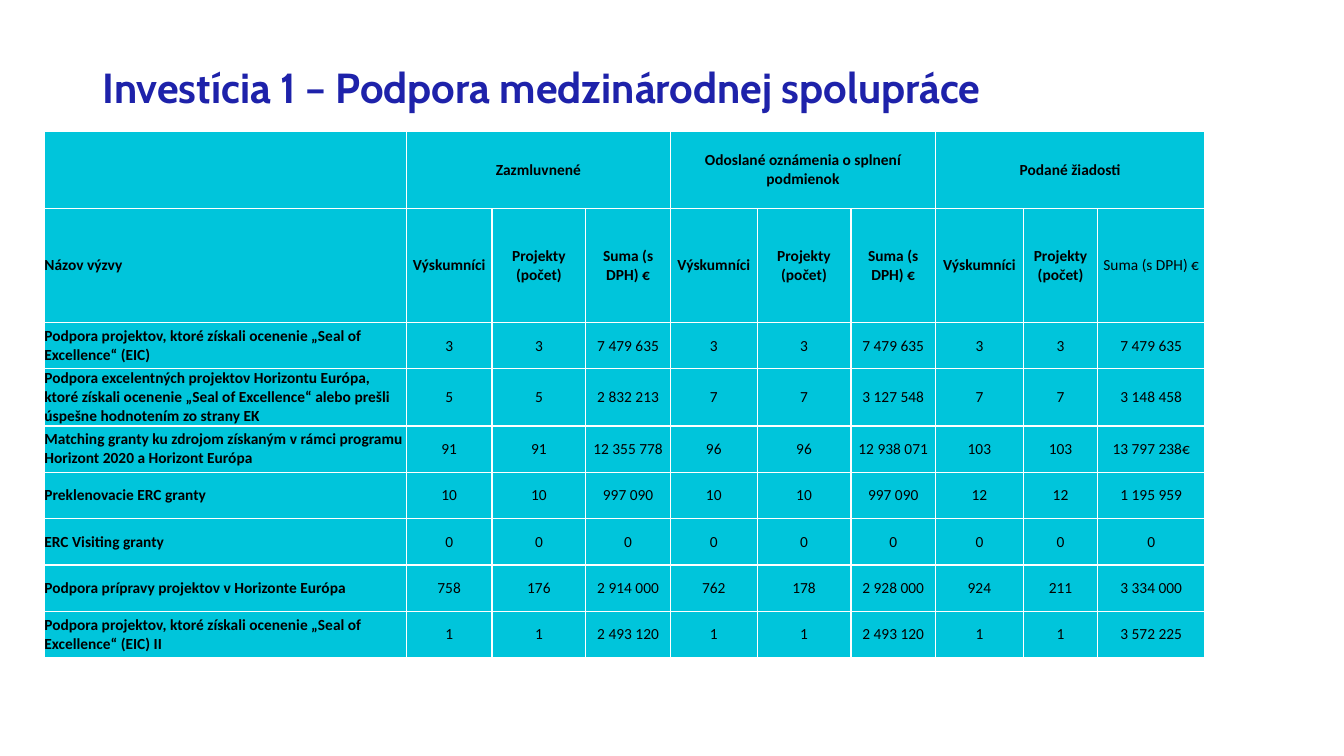
from dataclasses import dataclass

from lxml.etree import SubElement
from pptx import Presentation
from pptx.dml.color import RGBColor
from pptx.enum.text import MSO_ANCHOR, PP_ALIGN
from pptx.oxml.ns import qn
from pptx.util import Pt

PX = 9144  # EMU, 100 px to the inch


@dataclass(frozen=True)
class Theme:
    title_color: RGBColor = RGBColor(0x1E, 0x22, 0xAA)
    text_color: RGBColor = RGBColor(0, 0, 0)
    cell_fill: RGBColor = RGBColor(0x00, 0xC5, 0xDB)
    border: str = "FFFFFF"
    title_font: str = "Cabin"
    table_font: str = "Calibri"
    title_size: int = 30
    table_size: int = 11
    border_width: int = 1


THEME = Theme()
TITLE = "Investícia 1 – Podpora medzinárodnej spolupráce"
GROUPS = ["Zazmluvnené", "Odoslané oznámenia o splnení podmienok", "Podané žiadosti"]
MEASURES = ["Výskumníci", "Projekty (počet)", "Suma (s DPH) €"]
CALLS = [
    ["Podpora projektov, ktoré získali ocenenie „Seal of Excellence“ (EIC)",
     "3", "3", "7 479 635", "3", "3", "7 479 635", "3", "3", "7 479 635"],
    ["Podpora excelentných projektov Horizontu Európa, ktoré získali ocenenie "
     "„Seal of Excellence“ alebo prešli úspešne hodnotením zo strany EK",
     "5", "5", "2 832 213", "7", "7", "3 127 548", "7", "7", "3 148 458"],
    ["Matching granty ku zdrojom získaným v rámci programu Horizont 2020 a Horizont Európa",
     "91", "91", "12 355 778", "96", "96", "12 938 071", "103", "103", "13 797 238€"],
    ["Preklenovacie ERC granty",
     "10", "10", "997 090", "10", "10", "997 090", "12", "12", "1 195 959"],
    ["ERC Visiting granty"] + ["0"] * 9,
    ["Podpora prípravy projektov v Horizonte Európa",
     "758", "176", "2 914 000", "762", "178", "2 928 000", "924", "211", "3 334 000"],
    ["Podpora projektov, ktoré získali ocenenie „Seal of Excellence“ (EIC) II",
     "1", "1", "2 493 120", "1", "1", "2 493 120", "1", "1", "3 572 225"],
]
COL_WIDTHS = [359, 85, 93, 84, 86, 93, 84, 87, 74, 106]
ROW_HEIGHTS = [77, 113, 46, 45] + [46] * 5


def set_attrs(obj, **values):
    for name, value in values.items():
        setattr(obj, name, value)


def emu(*lengths):
    return [length * PX for length in lengths]


def style_font(font, name, size, color, bold):
    set_attrs(font, name=name, size=Pt(size), bold=bold)
    font.color.rgb = color


def add_borders(cell):
    props = cell._tc.get_or_add_tcPr()
    for index, side in enumerate(("lnL", "lnR", "lnT", "lnB")):
        line = SubElement(props, qn(f"a:{side}"), w=str(Pt(THEME.border_width)))
        fill = SubElement(line, qn("a:solidFill"))
        SubElement(fill, qn("a:srgbClr"), val=THEME.border)
        props.insert(index, line)  # borders come before the cell fill


def write_cell(cell, text, align, bold):
    set_attrs(cell, margin_left=0, margin_right=0, margin_top=0, margin_bottom=0,
              vertical_anchor=MSO_ANCHOR.MIDDLE)
    p = cell.text_frame.paragraphs[0]
    p.alignment = align
    r = p.add_run()
    r.text = text
    style_font(r.font, THEME.table_font, THEME.table_size, THEME.text_color, bold)


def add_title(s, box):
    title = s.shapes.title
    set_attrs(title, **dict(zip(("left", "top", "width", "height"), emu(*box))))
    tf = title.text_frame
    set_attrs(tf, word_wrap=True, vertical_anchor=MSO_ANCHOR.TOP)
    p = tf.paragraphs[0]
    set_attrs(p, alignment=PP_ALIGN.LEFT, line_spacing=0.9)
    r = p.add_run()
    r.text = TITLE
    style_font(r.font, THEME.title_font, THEME.title_size, THEME.title_color, True)


def add_calls_table(s, left, top):
    box = emu(left, top, sum(COL_WIDTHS), sum(ROW_HEIGHTS))
    table = s.shapes.add_table(len(ROW_HEIGHTS), len(COL_WIDTHS), *box).table
    set_attrs(table, first_row=False, horz_banding=False)
    for column, width in zip(table.columns, emu(*COL_WIDTHS)):
        column.width = width
    for row, height in zip(table.rows, emu(*ROW_HEIGHTS)):
        row.height = height
    for cell in table.iter_cells():
        cell.fill.solid()
        cell.fill.fore_color.rgb = THEME.cell_fill
        add_borders(cell)

    span = len(MEASURES)
    for i, group in enumerate(GROUPS):
        first = 1 + i * span
        table.cell(0, first).merge(table.cell(0, first + span - 1))
        write_cell(table.cell(0, first), group, PP_ALIGN.CENTER, True)

    last_col = len(COL_WIDTHS) - 1
    rows = [["Názov výzvy"] + MEASURES * len(GROUPS)] + CALLS
    for r, values in enumerate(rows, start=1):
        for c, text in enumerate(values):
            align = PP_ALIGN.CENTER if c else PP_ALIGN.LEFT
            bold = c == 0 or (r == 1 and c < last_col)
            write_cell(table.cell(r, c), text, align, bold)


def main():
    prs = Presentation()
    prs.slide_width, prs.slide_height = emu(1333, 750)
    s = prs.slides.add_slide(prs.slide_layouts[5])
    add_title(s, (92, 62, 1167, 85))
    add_calls_table(s, 44, 130)
    prs.save("out.pptx")


if __name__ == "__main__":
    main()
